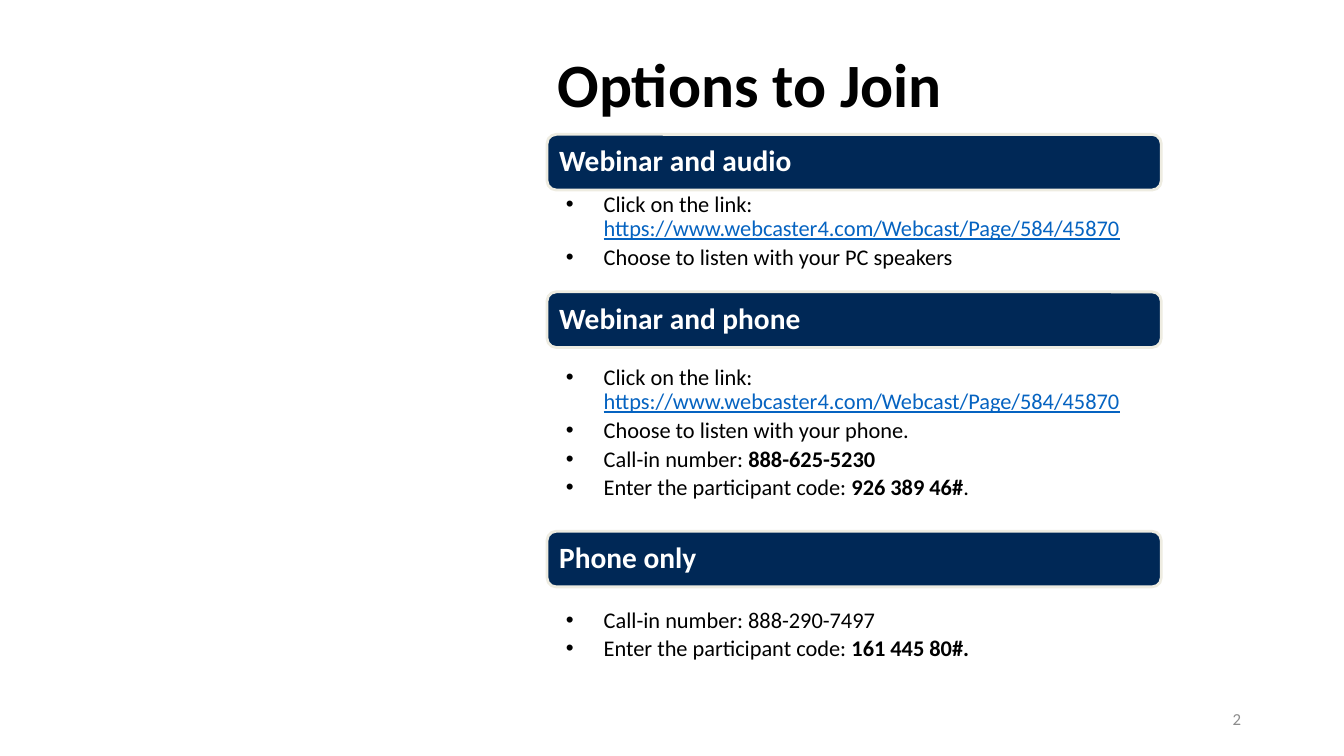
from dataclasses import dataclass

from lxml import etree
from pptx import Presentation
from pptx.dml.color import RGBColor
from pptx.enum.shapes import MSO_SHAPE
from pptx.enum.text import MSO_ANCHOR, PP_ALIGN
from pptx.oxml.ns import qn
from pptx.util import Pt

PX = 9525
ROUNDED = MSO_SHAPE.ROUNDED_RECTANGLE
TOP, MIDDLE, BOTTOM = MSO_ANCHOR.TOP, MSO_ANCHOR.MIDDLE, MSO_ANCHOR.BOTTOM
LEFT, RIGHT = PP_ALIGN.LEFT, PP_ALIGN.RIGHT


@dataclass(frozen=True)
class Theme:
    """Colours, font and type sizes of the slide."""
    font: str = "Calibri"
    ink: str = "000000"
    navy: str = "002856"
    cream: str = "EEECE1"
    white: str = "FFFFFF"
    link: str = "0563C1"
    grey: str = "8C8C8C"
    title_size: int = 44
    heading_size: int = 21
    body_size: int = 16
    number_size: int = 12


THEME = Theme()
COLUMN_LEFT, COLUMN_WIDTH = 521, 585
BAR_HEIGHT = 53
BULLET_INDENT = 36

LINK_STEP = [("Click on the link: ", "plain"),
             ("https://www.webcaster4.com/Webcast/Page/584/45870", "link")]
OPTIONS = [
    ("Webinar and audio", 128, 181, 107, [
        LINK_STEP,
        [("Choose to listen with your PC speakers", "plain")],
    ]),
    ("Webinar and phone", 278, 346, 139, [
        LINK_STEP,
        [("Choose to listen with your phone.", "plain")],
        [("Call-in number: ", "plain"), ("888-625-5230", "bold")],
        [("Enter the participant code: ", "plain"), ("926 389 46#", "bold"),
         (".", "plain")],
    ]),
    ("Phone only", 506, 577, 60, [
        [("Call-in number: 888-290-7497", "plain")],
        [("Enter the participant code: ", "plain"), ("161 445 80#.", "bold")],
    ]),
]


def px(*lengths):
    """Turn pixel lengths into EMU."""
    return [length * PX for length in lengths]


def style_font(font, size, color, bold=False):
    """Apply the theme font with a size, colour and weight."""
    font.name = THEME.font
    font.size = Pt(size)
    font.color.rgb = RGBColor.from_string(color)
    font.bold = bold


def set_frame(frame, anchor, insets):
    """Make a text frame wrap, with an anchor and insets in px."""
    frame.word_wrap = True
    frame.vertical_anchor = anchor
    (frame.margin_left, frame.margin_top,
     frame.margin_right, frame.margin_bottom) = px(*insets)


def add_label(slide, text, box, anchor, align, size, color, bold=False):
    """Add a single line of text."""
    frame = slide.shapes.add_textbox(*px(*box)).text_frame
    set_frame(frame, anchor, (10, 5, 10, 5))
    frame.text = text
    line = frame.paragraphs[0]
    line.alignment = align
    line.line_spacing = 0.9
    style_font(line.runs[0].font, size, color, bold)


def add_heading_bar(slide, text, top):
    """Add a rounded bar holding the heading of one option."""
    bar = slide.shapes.add_shape(
        ROUNDED, *px(COLUMN_LEFT, top, COLUMN_WIDTH, BAR_HEIGHT))
    bar.shadow.inherit = False
    bar.fill.solid()
    bar.fill.fore_color.rgb = RGBColor.from_string(THEME.navy)
    bar.line.color.rgb = RGBColor.from_string(THEME.cream)
    bar.line.width = Pt(2)
    set_frame(bar.text_frame, MIDDLE, (9, 9, 9, 9))
    bar.text_frame.text = text
    heading = bar.text_frame.paragraphs[0]
    heading.alignment = LEFT
    heading.line_spacing = 0.9
    style_font(heading.runs[0].font, THEME.heading_size, THEME.white, True)


def set_bullet(paragraph):
    """Give a paragraph a round bullet with a hanging indent."""
    properties = paragraph._p.get_or_add_pPr()
    properties.set("marL", str(BULLET_INDENT * PX))
    properties.set("indent", str(-BULLET_INDENT * PX))
    etree.SubElement(properties, qn("a:buFont")).set("typeface", "Arial")
    etree.SubElement(properties, qn("a:buChar")).set("char", "•")


def add_steps(slide, steps, top, height):
    """Add the bulleted steps of one option."""
    frame = slide.shapes.add_textbox(
        *px(COLUMN_LEFT, top, COLUMN_WIDTH, height)).text_frame
    set_frame(frame, TOP, (18, 3, 15, 3))
    for index, step in enumerate(steps):
        paragraph = frame.add_paragraph() if index else frame.paragraphs[0]
        set_bullet(paragraph)
        paragraph.line_spacing = 0.9
        paragraph.space_after = Pt(3.2)
        for text, kind in step:
            run = paragraph.add_run()
            run.text = text
            color = THEME.link if kind == "link" else THEME.ink
            style_font(run.font, THEME.body_size, color, kind == "bold")
            run.font.underline = kind == "link"


def main():
    """Build the slide and save it."""
    deck = Presentation()
    deck.slide_width, deck.slide_height = px(1280, 720)
    slide = deck.slides.add_slide(deck.slide_layouts[6])
    add_label(slide, "Options to Join", (COLUMN_LEFT, 20, 568, 100),
              BOTTOM, LEFT, THEME.title_size, THEME.ink, True)
    for heading, bar_top, steps_top, steps_height, steps in OPTIONS:
        add_heading_bar(slide, heading, bar_top)
        add_steps(slide, steps, steps_top, steps_height)
    add_label(slide, "2", (904, 667, 288, 38),
              MIDDLE, RIGHT, THEME.number_size, THEME.grey)
    deck.save("out.pptx")


if __name__ == "__main__":
    main()
